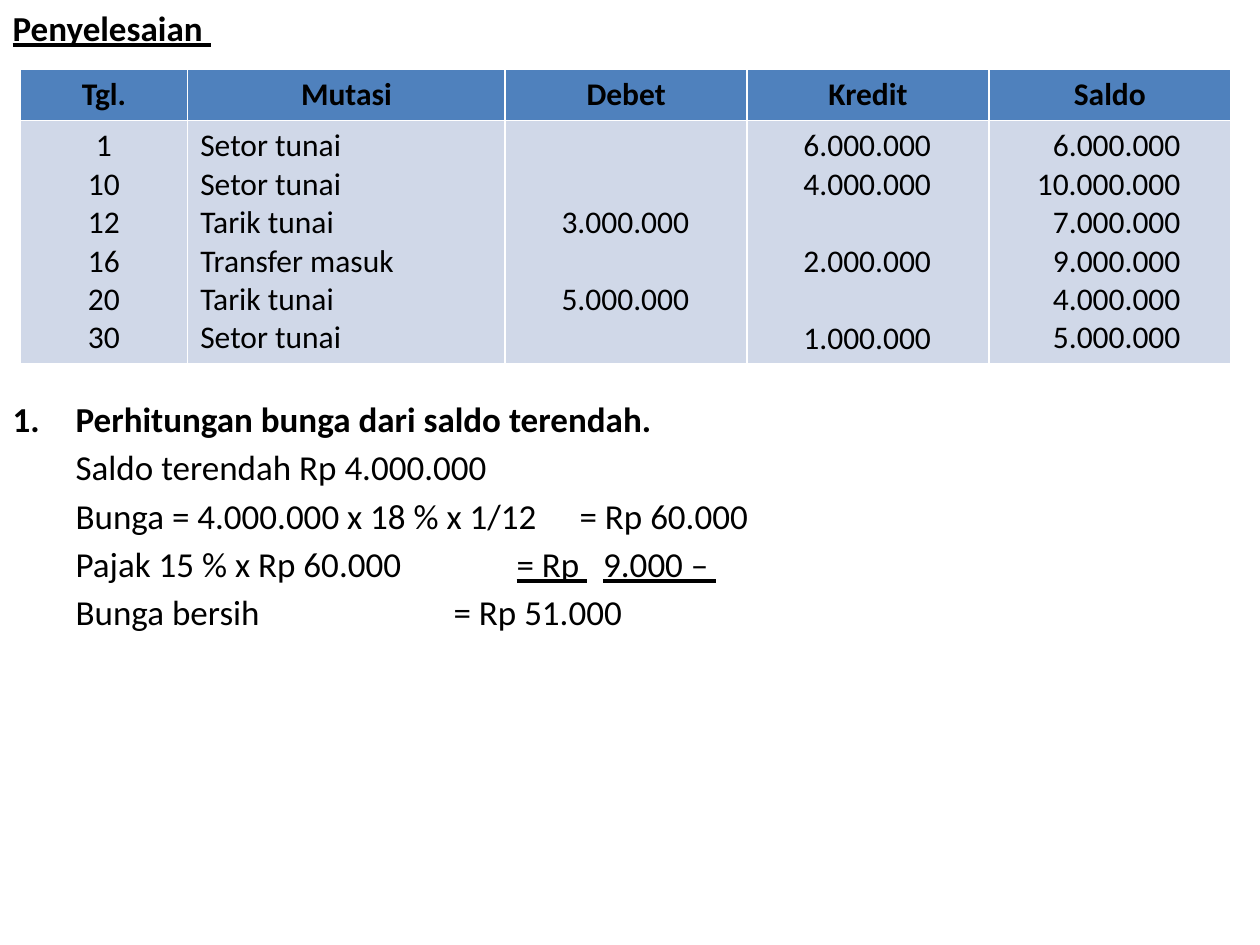
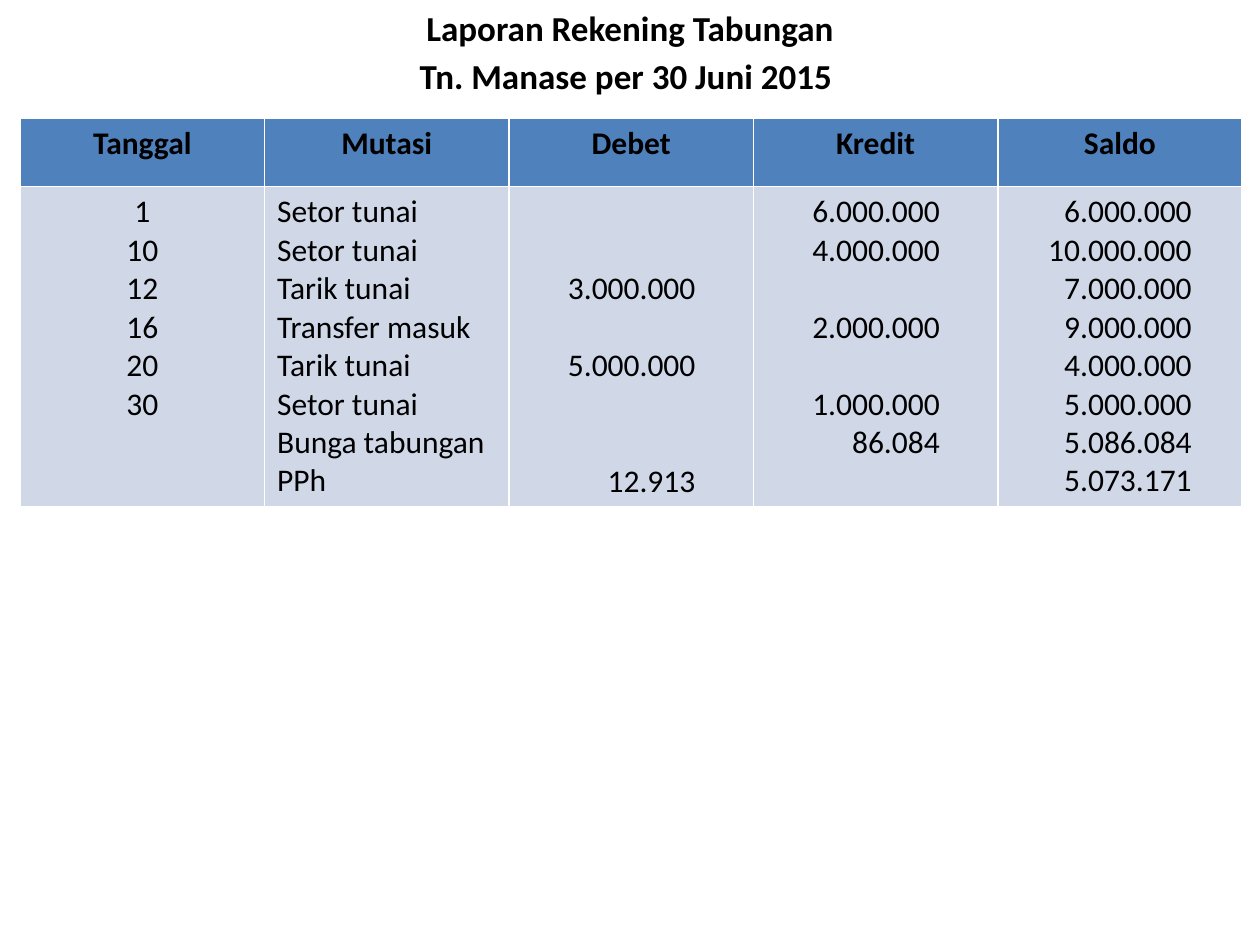
from pptx import Presentation, util as u
from pptx.dml.color import RGBColor
from pptx.enum import text
from lxml import etree

BLACK = RGBColor(0x00, 0x00, 0x00)
HEADER_BLUE = RGBColor(0x4F, 0x81, 0xBD)
BODY_BLUE = RGBColor(0xD0, 0xD8, 0xE8)
FONT = "Calibri"
LINE_PT = 22  # height of one 18 pt table line
LEFT, CENTER, RIGHT = text.PP_ALIGN.LEFT, text.PP_ALIGN.CENTER, text.PP_ALIGN.RIGHT
ALIGNS = [CENTER, LEFT, RIGHT, RIGHT, RIGHT]
RIGHT_MARGINS = [0.1, 0.1, 0.46, 0.46, 0.4]

MUTATIONS = [
    ("1", "Setor tunai", "", "6.000.000", "6.000.000"),
    ("10", "Setor tunai", "", "4.000.000", "10.000.000"),
    ("12", "Tarik tunai", "3.000.000", "", "7.000.000"),
    ("16", "Transfer masuk", "", "2.000.000", "9.000.000"),
    ("20", "Tarik tunai", "5.000.000", "", "4.000.000"),
    ("30", "Setor tunai", "", "1.000.000", "5.000.000"),
]
INTEREST = [
    ("", "Bunga tabungan", "", "86.084", "5.086.084"),
    ("", "PPh", "12.913", "", "5.073.171"),
]

prs = Presentation()
prs.slide_width, prs.slide_height = u.Inches(10), u.Inches(7.5)


def format_runs(p, size, bold):
    for r in p.runs:
        r.font.name, r.font.size, r.font.bold = FONT, u.Pt(size), bold
        r.font.color.rgb = BLACK


def add_account_slide(lines, first_header, entries, top, header_height, widths):
    """Add a slide with body lines of (text, bold) and an account table."""
    s = prs.slides.add_slide(prs.slide_layouts[1])
    title = s.shapes.title.element
    title.getparent().remove(title)
    body = s.placeholders[1]
    body.left, body.top = 0, 0
    body.width, body.height = prs.slide_width, prs.slide_height
    tf = body.text_frame
    tf.auto_size = text.MSO_AUTO_SIZE.NONE
    tf.text = "\n".join(line for line, _ in lines)
    for p, (_, bold) in zip(tf.paragraphs, lines):
        format_runs(p, 20, bold)
        p.space_before = u.Pt(3.6)
        pPr = p._p.get_or_add_pPr()
        pPr.set("marL", "0")
        pPr.set("indent", "0")
        etree.SubElement(pPr, pPr.tag.replace("pPr", "buNone"))

    heights = [header_height, (len(entries) * LINE_PT + 7.2) / 72]
    table = s.shapes.add_table(2, 5, u.Inches(0.16), u.Inches(top),
                               u.Inches(sum(widths)), u.Inches(sum(heights))).table
    for row, height in zip(table.rows, heights):
        row.height = u.Inches(height)
    headers = [first_header, "Mutasi", "Debet", "Kredit", "Saldo"]
    for i, (header, values) in enumerate(zip(headers, zip(*entries))):
        table.columns[i].width = u.Inches(widths[i])
        head, cell = table.cell(0, i), table.cell(1, i)
        for c, colour in ((head, HEADER_BLUE), (cell, BODY_BLUE)):
            c.fill.solid()
            c.fill.fore_color.rgb = colour
        head.text = header
        head.text_frame.paragraphs[0].alignment = CENTER
        format_runs(head.text_frame.paragraphs[0], 18, True)

        filled = [n for n, value in enumerate(values) if value]
        cell.text = "\n".join(values[n] for n in filled)
        cell.margin_top = u.Inches(0.05) + u.Pt(LINE_PT * filled[0])
        cell.margin_right = u.Inches(RIGHT_MARGINS[i])
        previous = filled[0] - 1
        for p, n in zip(cell.text_frame.paragraphs, filled):
            p.alignment = ALIGNS[i]
            p.space_before = u.Pt(LINE_PT * (n - previous - 1))
            format_runs(p, 18, False)
            previous = n
    return tf


# Slide 1: solution with the lowest-balance interest
tf = add_account_slide(
    [("Penyelesaian ", True),
     ("Perhitungan bunga dari saldo terendah.", True),
     ("Saldo terendah Rp 4.000.000", False),
     ("Bunga = 4.000.000 x 18 % x 1/12\t= Rp 60.000", False),
     ("Pajak 15 % x Rp 60.000\t\t", False),
     ("Bunga bersih\t\t\t\t= Rp 51.000", False)],
    "Tgl.", MUTATIONS, 0.55, 0.4, [1.33, 2.52, 1.92, 1.92, 1.92])
heading, method, *steps = tf.paragraphs
heading.runs[0].font.underline = True
method.space_before = u.Pt(199.6)  # room for the table
for p in [method, *steps]:
    p._p.pPr.set("marL", str(u.Inches(0.5)))
pPr = method._p.pPr
pPr.set("indent", str(-u.Inches(0.5)))
bullet = pPr[-1]
bullet.tag = bullet.tag.replace("buNone", "buAutoNum")
bullet.set("type", "arabicPeriod")

tax = steps[2]
for part in ("= Rp", " ", "9.000 – "):
    r = tax.add_run()
    r.text = part
    r.font.underline = True
    if part == " ":
        r.font._element.set("spc", "900")  # lines up the shorter amount
format_runs(tax, 20, False)

# Slide 2: savings account report
tf = add_account_slide(
    [("Laporan Rekening Tabungan", True), ("Tn. Manase per 30 Juni 2015 ", True)],
    "Tanggal", MUTATIONS + INTEREST, 0.94, 0.54, [1.94] * 5)
for p in tf.paragraphs:
    p.alignment = CENTER

prs.save("out.pptx")
